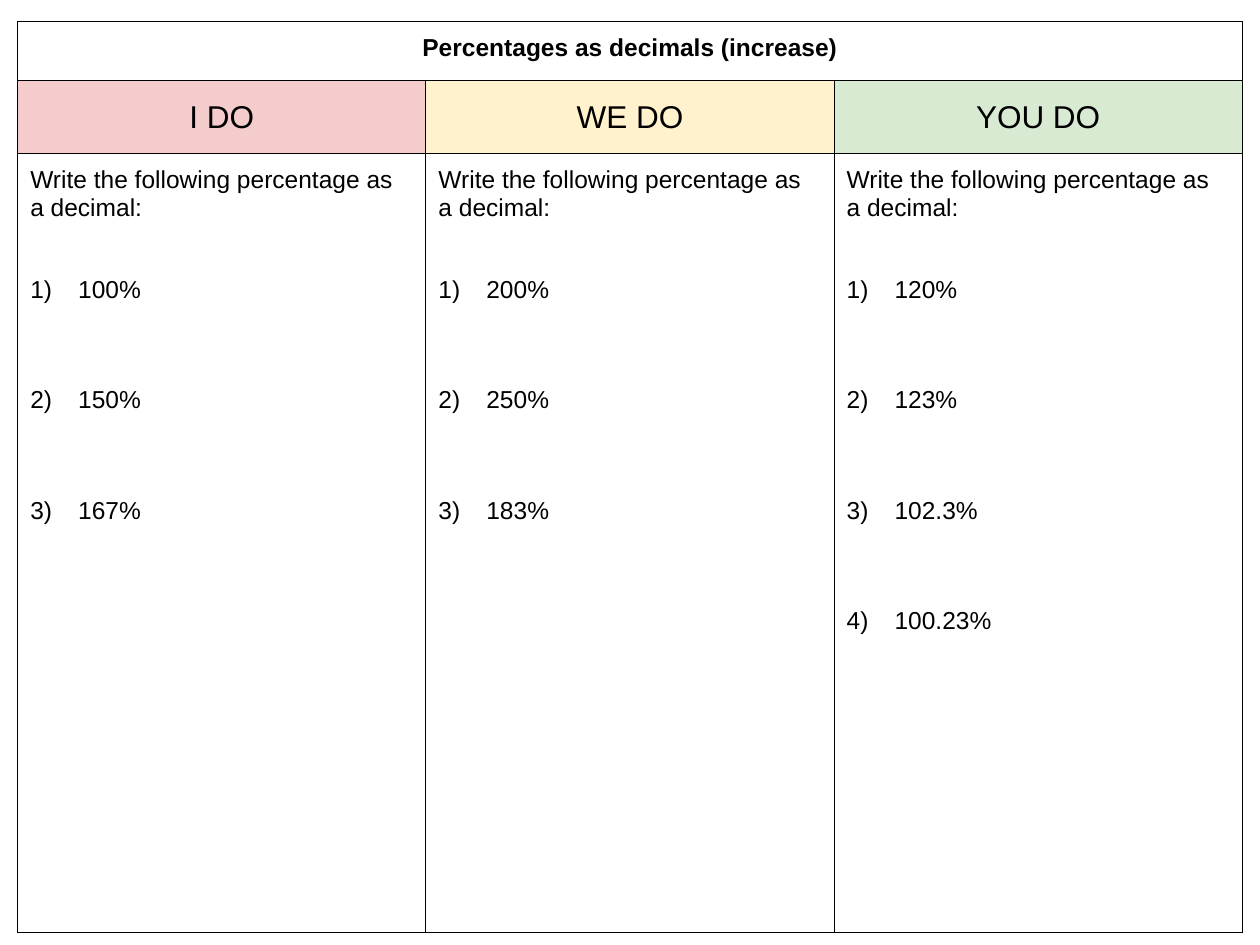
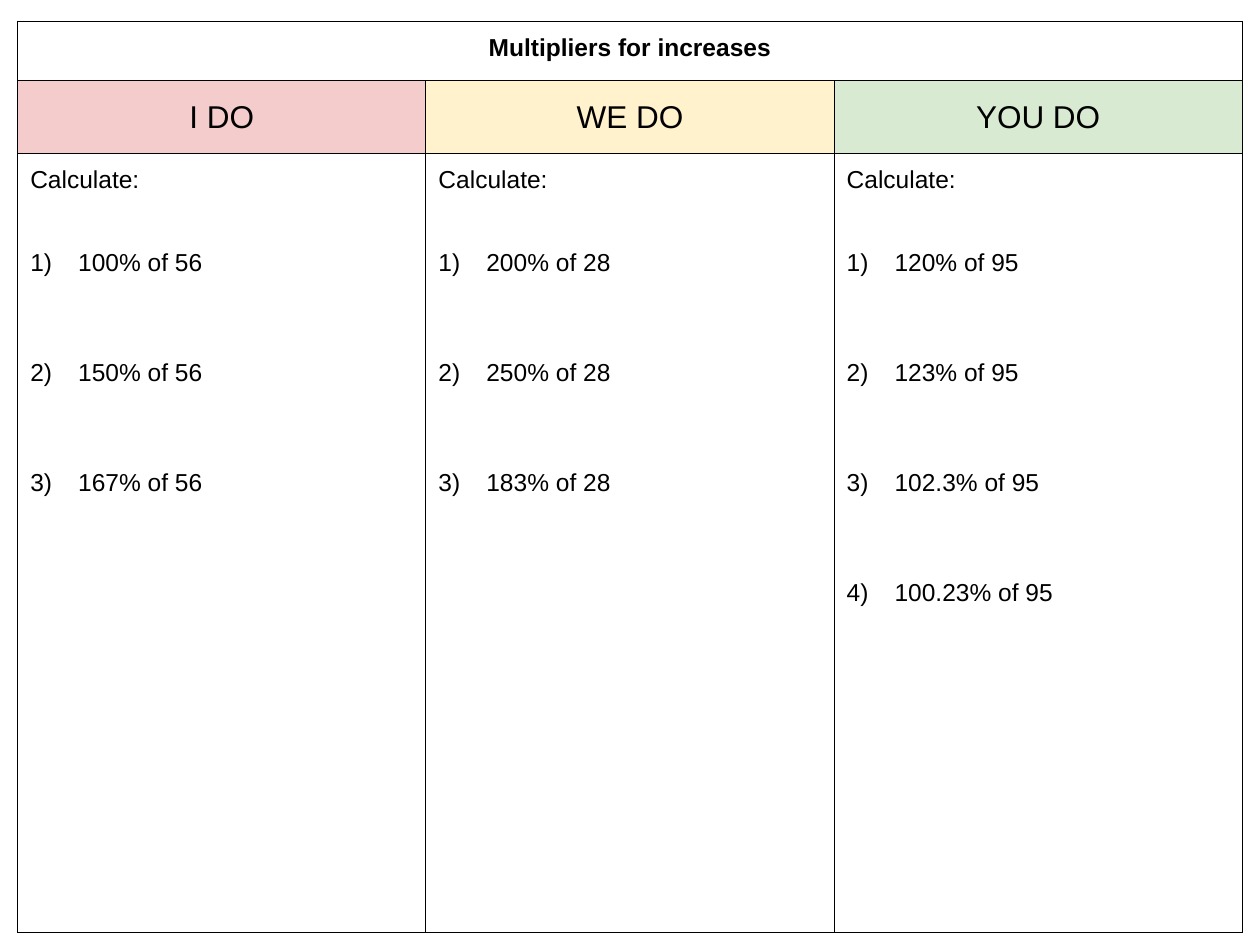
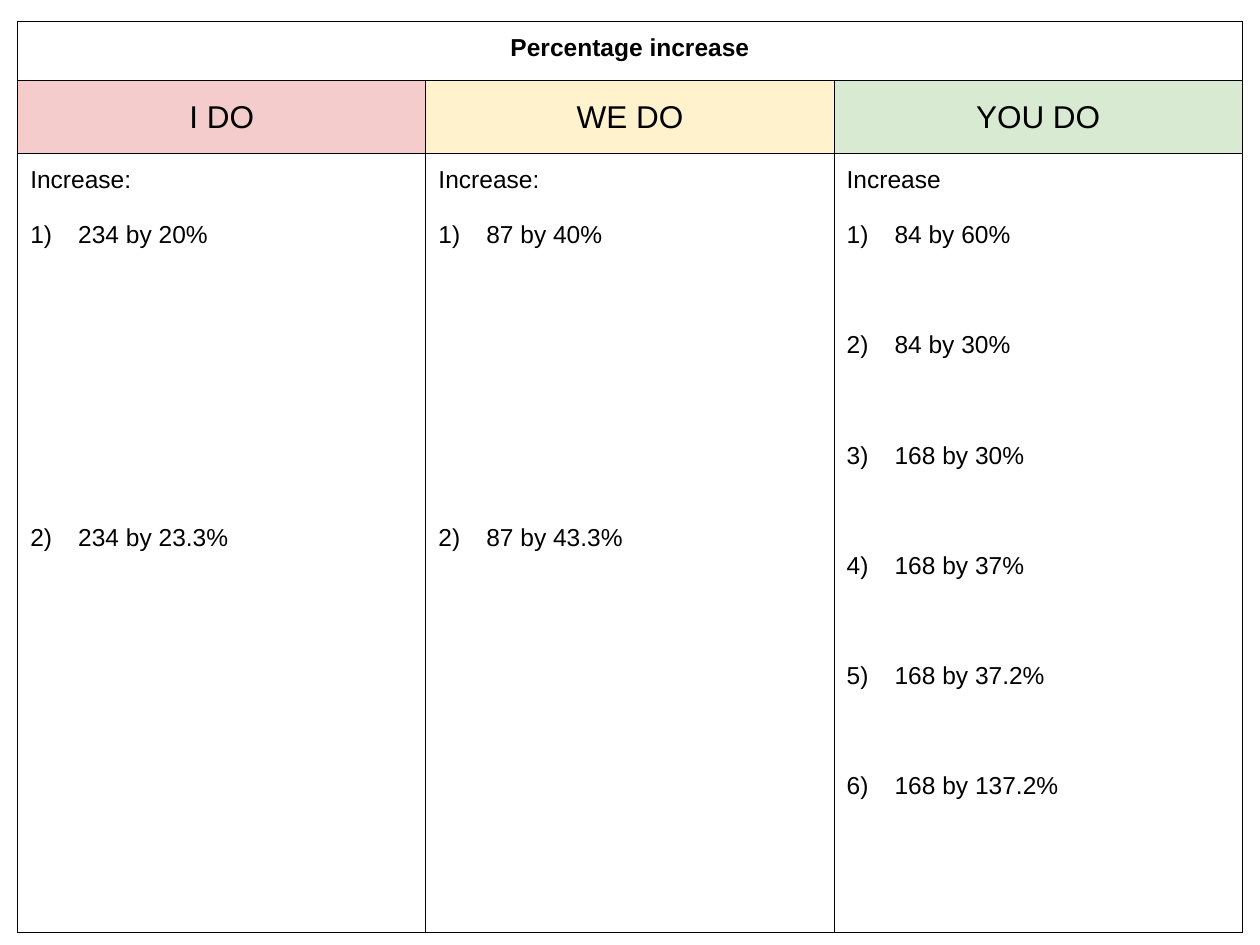
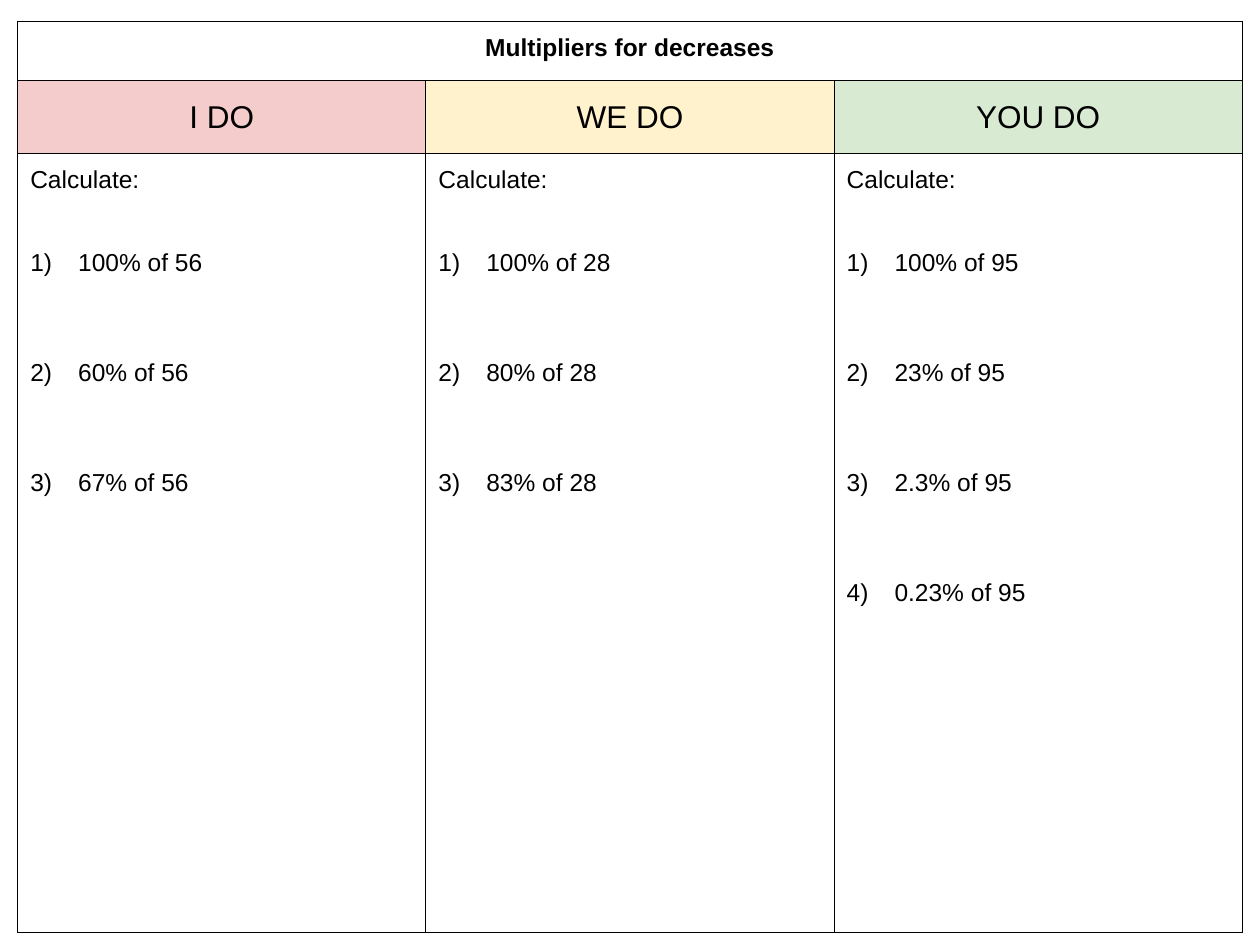
"""Build four "I do, we do, you do" worksheets on percentages, one table a slide."""
from lxml import etree
from pptx import Presentation
from pptx.dml.color import RGBColor
from pptx.enum.text import MSO_ANCHOR, PP_ALIGN
from pptx.oxml.ns import qn
from pptx.util import Inches, Pt

LEFT, CENTER = PP_ALIGN.LEFT, PP_ALIGN.CENTER
TOP, MIDDLE = MSO_ANCHOR.TOP, MSO_ANCHOR.MIDDLE

THEME = {
    "font": "Arial",
    "ink": "000000",
    "stages": {"I DO": "F4CCCC", "WE DO": "FFF2CC", "YOU DO": "D9EAD3"},
    "body": Pt(14),
    "stage": Pt(18),
    "line": Pt(15.75),
    "border": Pt(0.75),
    "inset": Inches(0.1),
    "indent": Inches(0.38),
}

SHEETS = [
    ("Percentages as decimals (increase)", 2, [
        ("Write the following percentage as a decimal:", 3, ["100%", "150%", "167%"]),
        ("Write the following percentage as a decimal:", 3, ["200%", "250%", "183%"]),
        ("Write the following percentage as a decimal:", 3,
         ["120%", "123%", "102.3%", "100.23%"]),
    ]),
    ("Multipliers for increases", 2, [
        ("Calculate:", 3, ["100% of 56", "150% of 56", "167% of 56"]),
        ("Calculate:", 3, ["200% of 28", "250% of 28", "183% of 28"]),
        ("Calculate:", 3, ["120% of 95", "123% of 95", "102.3% of 95", "100.23% of 95"]),
    ]),
    ("Percentage increase", 1, [
        ("Increase:", 10, ["234 by 20%", "234 by 23.3%"]),
        ("Increase:", 10, ["87 by 40%", "87 by 43.3%"]),
        ("Increase", 3, ["84 by 60%", "84 by 30%", "168 by 30%", "168 by 37%",
                         "168 by 37.2%", "168 by 137.2%"]),
    ]),
    ("Multipliers for decreases", 2, [
        ("Calculate:", 3, ["100% of 56", "60% of 56", "67% of 56"]),
        ("Calculate:", 3, ["100% of 28", "80% of 28", "83% of 28"]),
        ("Calculate:", 3, ["100% of 95", "23% of 95", "2.3% of 95", "0.23% of 95"]),
    ]),
]


def write(p, text, size, bold=False, align=LEFT):
    """Add one formatted run to a paragraph."""
    p.alignment = align
    r = p.add_run()
    r.text = text
    for name, value in {"name": THEME["font"], "size": size, "bold": bold}.items():
        setattr(r.font, name, value)
    r.font.color.rgb = RGBColor.from_string(THEME["ink"])


def solid(parent, tag):
    """Add a child that holds the ink colour."""
    child = etree.SubElement(parent, qn(tag))
    etree.SubElement(child, qn("a:srgbClr"), val=THEME["ink"])


prs = Presentation()
prs.slide_width, prs.slide_height = Inches(10), Inches(7.5)
blank = prs.slide_layouts[6]
left, top = Inches(0.14), Inches(0.17)
width = prs.slide_width - 2 * left
row_heights = [Inches(h) for h in (0.47, 0.58, 6.18)]

for title, lead, columns in SHEETS:
    s = prs.slides.add_slide(blank)
    tbl = s.shapes.add_table(3, 3, left, top, width, sum(row_heights)).table
    tbl.first_row = tbl.horz_banding = False
    for row, height in zip(tbl.rows, row_heights):
        row.height = height
    for col in tbl.columns:
        col.width = width // 3

    for cell in tbl.iter_cells():
        for side in ("left", "right", "top", "bottom"):
            setattr(cell, f"margin_{side}", THEME["inset"])
        cell.vertical_anchor = TOP
        tc_pr = cell._tc.get_or_add_tcPr()
        for edge in "LRTB":
            ln = etree.SubElement(tc_pr, qn(f"a:ln{edge}"), w=str(THEME["border"]))
            solid(ln, "a:solidFill")
        cell.fill.background()

    tbl.cell(0, 0).merge(tbl.cell(0, 2))
    write(tbl.cell(0, 0).text_frame.paragraphs[0], title, THEME["body"], True, CENTER)

    for i, (stage, colour) in enumerate(THEME["stages"].items()):
        cell = tbl.cell(1, i)
        cell.vertical_anchor = MIDDLE
        cell.fill.solid()
        cell.fill.fore_color.rgb = RGBColor.from_string(colour)
        write(cell.text_frame.paragraphs[0], stage, THEME["stage"], align=CENTER)

        task, gap, questions = columns[i]
        tf = tbl.cell(2, i).text_frame
        write(tf.paragraphs[0], task, THEME["body"])
        for n, question in enumerate(questions):
            p = tf.add_paragraph()
            write(p, question, THEME["body"])
            p.space_before = (gap if n else lead) * THEME["line"]
            p_pr = p._p.get_or_add_pPr()
            p_pr.set("marL", str(THEME["indent"]))
            p_pr.set("indent", str(-THEME["indent"]))
            solid(p_pr, "a:buClr")
            etree.SubElement(p_pr, qn("a:buFont"), typeface=THEME["font"])
            etree.SubElement(p_pr, qn("a:buAutoNum"), type="arabicParenR")

prs.save("out.pptx")
